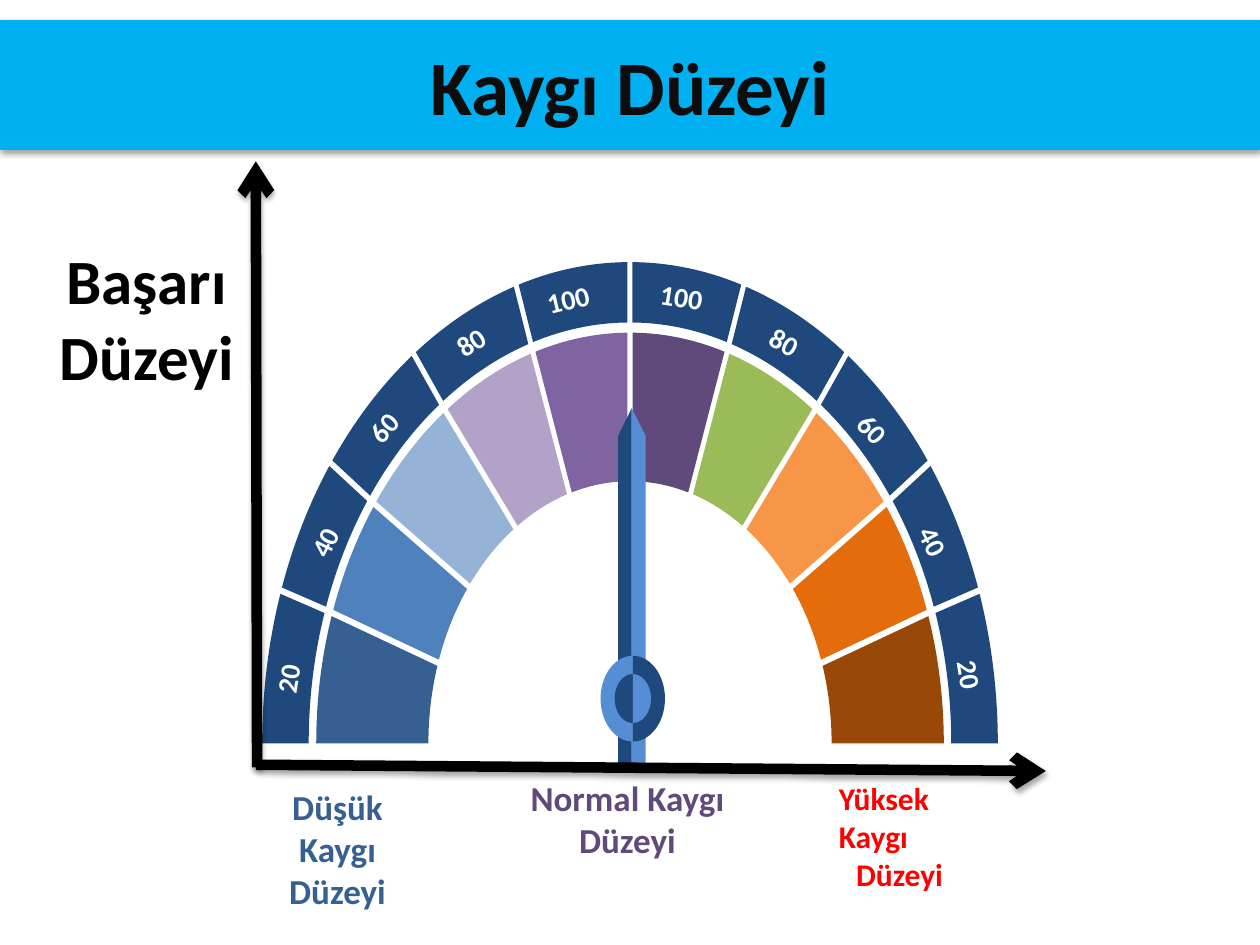
"""Build the anxiety level gauge slide."""
from math import cos, degrees, radians, sin, tan

from lxml import etree
from pptx import Presentation
from pptx.dml.color import RGBColor
from pptx.enum.shapes import MSO_CONNECTOR as CONN, MSO_SHAPE as SHAPE
from pptx.enum.text import MSO_ANCHOR as ANCHOR, MSO_AUTO_SIZE as AUTO, PP_ALIGN as ALIGN
from pptx.oxml import parse_xml
from pptx.oxml.ns import qn
from pptx.util import Pt

C = {"banner": "00B0F0", "title": "0D0D0D", "black": "000000", "white": "FFFFFF",
     "navy": "1F497D", "light": "558ED5", "low": "376092", "normal": "604A7B", "high": "FF0000"}
LEFT = ["376092", "4F81BD", "95B3D7", "B3A2C7", "8064A2"]
RIGHT = ["984807", "E46C0A", "F79646", "9BBB59", "604A7B"]
SHADOW = ('<a:effectLst xmlns:a="http://schemas.openxmlformats.org/drawingml/2006/main">'
          '<a:outerShdw blurRad="39370" dist="22860" dir="5400000" rotWithShape="0">'
          '<a:srgbClr val="000000"><a:alpha val="35000"/></a:srgbClr>'
          '</a:outerShdw></a:effectLst>')


def add_outline(shapes, parts, color):
    points, curves = [], []
    for part in parts:
        if len(part) == 2:
            points.append(part)
            continue
        cx, cy, rx, ry, first, last = part
        a, b = radians(first), radians(last)
        k = 4 / 3 * tan((b - a) / 4)
        unit = [(cos(a), sin(a)), (cos(a) - k * sin(a), sin(a) + k * cos(a)),
                (cos(b) + k * sin(b), sin(b) - k * cos(b)), (cos(b), sin(b))]
        arc = [(cx + rx * u, cy - ry * v) for u, v in unit]
        if points and max(abs(m - n) for m, n in zip(points[-1], arc[0])) < 0.01:
            arc = arc[1:]
        points += arc
        curves.append(len(points) - 4)
    points = [(Pt(x), Pt(y)) for x, y in points]
    builder = shapes.build_freeform(*points[0], scale=1.0)
    builder.add_line_segments(points[1:], close=True)
    sp = builder.convert_to_shape()
    lines = list(sp.element.iter(qn("a:lnTo")))
    for i in curves:
        curve = lines[i]
        curve.tag = qn("a:cubicBezTo")
        for line in lines[i + 1:i + 3]:
            curve.append(line[0])
            curve.getparent().remove(line)
    sp.shadow.inherit = False
    sp.fill.solid()
    sp.fill.fore_color.rgb = RGBColor.from_string(color)
    sp.line.fill.background()


def add_text(shapes, box, lines, size, color, wrap=True, rotation=0):
    tb = shapes.add_textbox(*[Pt(v) for v in box])
    tb.rotation = rotation
    tf = tb.text_frame
    tf.word_wrap = wrap
    tf.auto_size = AUTO.SHAPE_TO_FIT_TEXT
    tf.text = "\n".join(lines)
    for p in tf.paragraphs:
        p.alignment = ALIGN.CENTER
        p.font.name, p.font.size, p.font.bold = "Calibri", Pt(size), True
        p.font.color.rgb = RGBColor.from_string(color)
    return tf


prs = Presentation()
prs.slide_width, prs.slide_height = Pt(720), Pt(540)
s = prs.slides.add_slide(prs.slide_layouts[6])

banner = s.shapes.add_shape(SHAPE.RECTANGLE, 0, Pt(11.5), Pt(720), Pt(74.2))
banner.fill.solid()
banner.fill.fore_color.rgb = RGBColor.from_string(C["banner"])
banner.line.fill.background()
banner.element.spPr.append(parse_xml(SHADOW))
tf = banner.text_frame
tf.vertical_anchor = ANCHOR.MIDDLE
p = tf.paragraphs[0]
p.text = "Kaygı Düzeyi"
p.alignment = ALIGN.CENTER
p.font.name, p.font.size, p.font.bold = "Calibri", Pt(44), True
p.font.color.rgb = RGBColor.from_string(C["title"])

CX, BASE, HALF_GAP = 360, 424.8, 1.45
BOUNDS = [0, 18.5, 35.6, 54, 72, 90]
INNER_BOUNDS = [0, 17.9, 36.8, 55.4, 72.5, 90]
WEDGE = [(179.3, 234.7, BOUNDS), (115.2, 149.8, INNER_BOUNDS)]
SCALE = [(210.2, 275, BOUNDS), (183.6, 240.5, BOUNDS)]
NAMES = ["20", "40", "60", "80", "100"]
LEFT_LABELS = [(164.5, 387.7, 279.1), (185.4, 310, 296.3), (219.2, 244.4, 312.1),
               (268.9, 195.5, 327.4), (324.7, 171, 346.6)]
RIGHT_LABELS = [(554, 385.6, 80.8), (533.2, 309.2, 63), (498.6, 245.2, 45.7),
                (448.2, 195.5, 28.5), (389.5, 169.6, 8.9)]

for side, fills, labels in [(-1, LEFT, LEFT_LABELS), (1, RIGHT, RIGHT_LABELS)]:
    for i, (fill, name, (x, y, turn)) in enumerate(zip(fills, NAMES, labels)):
        group = s.shapes.add_group_shape()
        for shapes, band, color in [(s.shapes, WEDGE, fill), (group.shapes, SCALE, C["navy"])]:
            arcs = []
            for rx, ry, bounds in band:
                gap = degrees(HALF_GAP / rx)
                ends = [bounds[i] + (gap if i else 0), bounds[i + 1] - gap]
                arcs.append((CX, BASE, side * rx, ry, *(ends[::-1] if arcs else ends)))
            add_outline(shapes, arcs, color)
        width = 38.9 if name == "100" else 31
        add_text(group.shapes, (x - width / 2, y - 13.3, width, 26.6), [name], 16,
                 C["white"], False, turn)

needle = s.shapes.add_group_shape().shapes
for edge, color in [(369, C["light"]), (353.2, C["navy"])]:
    add_outline(needle, [(361, 233.3), (edge, 249.1), (edge, 437.8), (361, 437.8)], color)
for rx, ry, left, right in [(18.4, 24.5, "light", "navy"), (10.4, 14, "navy", "light")]:
    for side, color in [(-1, left), (1, right)]:
        add_outline(needle, [(361.6, 399.2, side * rx, ry, a, a + 90) for a in (-90, 0)], C[color])

add_text(s.shapes, (26.3, 134.6, 115.2, 94.3), ["Başarı", "Düzeyi"], 36, C["black"], False)
add_text(s.shapes, (139.2, 445.2, 107.3, 79.9), ["Düşük Kaygı Düzeyi"], 20, C["low"])
add_text(s.shapes, (292.3, 439.9, 132.5, 55.4), ["Normal Kaygı Düzeyi"], 20, C["normal"])
tf = add_text(s.shapes, (472.3, 441.8, 83.5, 72.7), ["Yüksek Kaygı", "Düzeyi"], 18, C["high"])
tf.paragraphs[0].alignment = ALIGN.LEFT

for ends in [(146.2, 437, 597.6, 440.6), (146.9, 438.5, 146.2, 92.2)]:
    axis = s.shapes.add_connector(CONN.STRAIGHT, *[Pt(v) for v in ends])
    axis.line.width = Pt(6)
    axis.line.color.rgb = RGBColor.from_string(C["black"])
    etree.SubElement(axis.line._get_or_add_ln(), qn("a:tailEnd"), type="arrow")
    axis._element.spPr.append(parse_xml(SHADOW))

prs.save("out.pptx")
